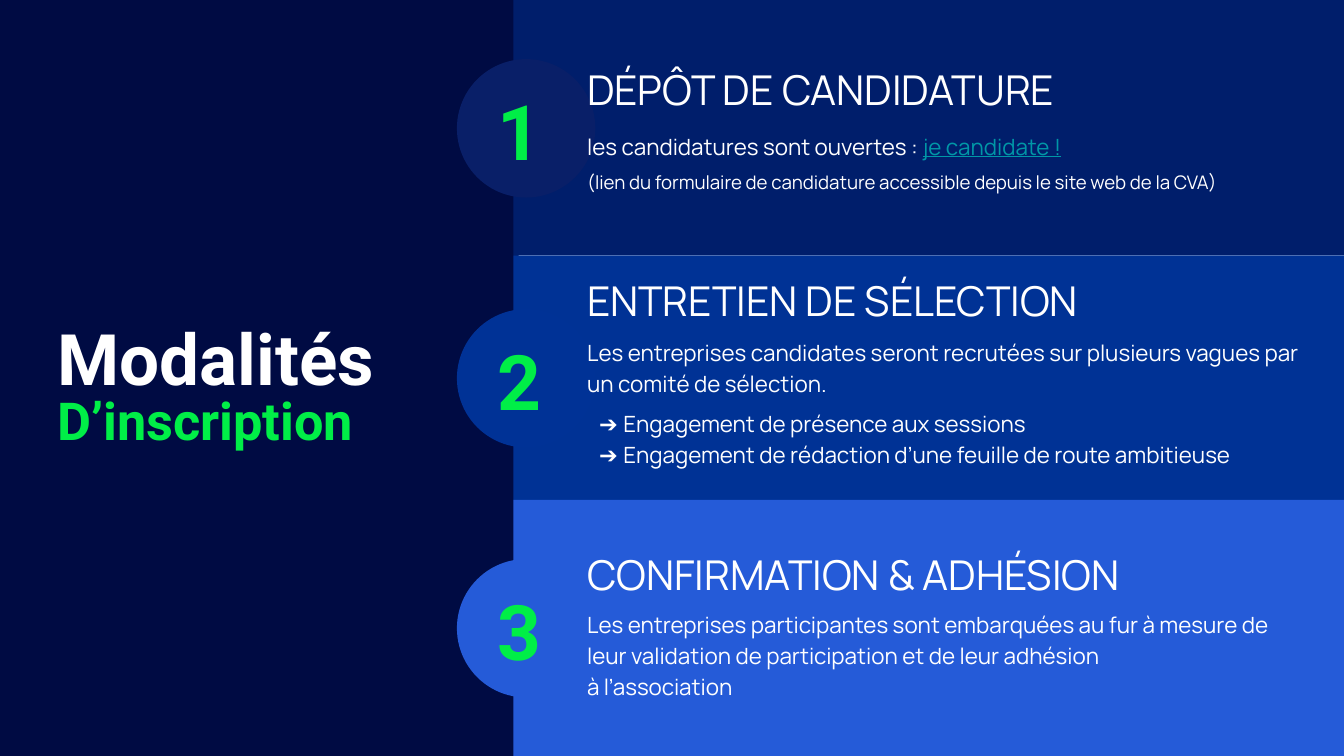
import pptx
import pptx.dml.color
import pptx.enum.shapes
import pptx.enum.text
import pptx.oxml
import pptx.oxml.ns
import pptx.util

Inches = pptx.util.Inches
Pt = pptx.util.Pt
Shapes = pptx.enum.shapes.MSO_SHAPE
Align = pptx.enum.text.PP_ALIGN
Anchor = pptx.enum.text.MSO_ANCHOR

COLORS = {
    "panel": "000B43",
    "deposit": "001E6B",
    "deposit_circle": "091F68",
    "interview": "003295",
    "interview_circle": "003296",
    "confirmation": "255BD8",
    "white": "FFFFFF",
    "green": "00EE47",
    "link": "0097A7",
}

TITLES = [
    {"text": "Modalités", "area": (0.33, 2.24, 3.17, 0.84), "size": 38, "color": "white"},
    {"text": "D’inscription", "area": (0.33, 2.79, 2.79, 0.67), "size": 28, "color": "green"},
]

STEPS = [
    {
        "band": "deposit", "circle": "deposit_circle",
        "heading": "DÉPÔT DE CANDIDATURE", "heading_area": (4.27, 0.38, 5.13, 0.57),
        "body_area": (4.27, 0.83, 5.55, 0.67), "line_spacing": 1.5,
        "body": [
            {"spans": [("les candidatures sont ouvertes : ", {}),
                       ("je candidate !", {"color": "link", "underline": True})]},
            {"spans": [("(lien du formulaire de candidature accessible depuis le site web de la CVA)",
                        {"size": 10})]},
        ],
    },
    {
        "band": "interview", "circle": "interview_circle",
        "heading": "ENTRETIEN DE SÉLECTION", "heading_area": (4.27, 1.95, 5.62, 0.57),
        "body_area": (4.27, 2.4, 5.69, 1.18), "line_spacing": 1.15,
        "body": [
            {"spans": [("Les entreprises candidates seront recrutées sur plusieurs vagues "
                        "par un comité de sélection.", {})], "after": 5},
            {"spans": [("Engagement de présence aux sessions", {})], "bullet": "➔"},
            {"spans": [("Engagement de rédaction d’une feuille de route ambitieuse", {})], "bullet": "➔"},
        ],
    },
    {
        "band": "confirmation", "circle": "confirmation",
        "heading": "CONFIRMATION & ADHÉSION", "heading_area": (4.27, 3.99, 5.13, 0.57),
        "body_area": (4.27, 4.43, 5.55, 0.87), "line_spacing": 1.15,
        "body": [
            {"spans": [("Les entreprises participantes sont embarquées au fur à mesure de leur "
                        "validation de participation et de leur adhésion", {}),
                       ("\n", {}),
                       ("à l’association", {})]},
        ],
    },
]

SLIDE_WIDTH = 10
SLIDE_HEIGHT = SLIDE_WIDTH * 9 / 16
BAND_LEFT = 3.82
BAND_EDGES = [0, 1.9, 3.72, SLIDE_HEIGHT]
CIRCLE_LEFT, CIRCLE_TOP, CIRCLE_SIZE = 3.4, 0.44, 1.03
NUMBER_LEFT, NUMBER_TOP, NUMBER_WIDTH, NUMBER_HEIGHT = 3.6, 0.52, 0.37, 0.89
STEP_PITCH = 1.86


def rgb(name):
    return pptx.dml.color.RGBColor.from_string(COLORS[name])


def add_filled(slide, kind, area, color):
    shape = slide.shapes.add_shape(kind, *map(Inches, area))
    shape.shadow.inherit = False
    shape.fill.solid()
    shape.fill.fore_color.rgb = rgb(color)
    shape.line.fill.background()


def add_bullet(para, symbol, font):
    properties = para._p.get_or_add_pPr()
    properties.set("marL", str(Inches(0.27)))
    properties.set("indent", str(Inches(-0.18)))
    namespace = pptx.oxml.ns.nsdecls("a")
    for markup in (
        f'<a:buClr {namespace}><a:srgbClr val="{COLORS["white"]}"/></a:buClr>',
        f'<a:buFont {namespace} typeface="{font}"/>',
        f'<a:buChar {namespace} char="{symbol}"/>',
    ):
        properties.append(pptx.oxml.parse_xml(markup))


def add_text(slide, content, area, size=12, font="Manrope", color="white", bold=False,
             align=Align.LEFT, anchor=Anchor.MIDDLE, line_spacing=None):
    box = slide.shapes.add_textbox(*map(Inches, area))
    frame = box.text_frame
    frame.word_wrap = True
    frame.auto_size = pptx.enum.text.MSO_AUTO_SIZE.SHAPE_TO_FIT_TEXT
    frame.vertical_anchor = anchor
    frame.margin_left = frame.margin_right = Inches(0.1)
    frame.margin_top = frame.margin_bottom = Inches(0.1)
    paragraphs = [{"spans": [(content, {})]}] if isinstance(content, str) else content
    for index, item in enumerate(paragraphs):
        para = frame.add_paragraph() if index else frame.paragraphs[0]
        para.alignment = align
        if line_spacing:
            para.line_spacing = line_spacing
        if "after" in item:
            para.space_after = Pt(item["after"])
        if "bullet" in item:
            add_bullet(para, item["bullet"], font)
        for text, style in item["spans"]:
            if text == "\n":
                para.add_line_break()
                continue
            span = para.add_run()
            span.text = text
            span.font.name = font
            span.font.size = Pt(style.get("size", size))
            span.font.bold = bold
            span.font.underline = style.get("underline")
            span.font.color.rgb = rgb(style.get("color", color))


def main():
    deck = pptx.Presentation()
    deck.slide_width = Inches(SLIDE_WIDTH)
    deck.slide_height = Inches(SLIDE_HEIGHT)
    slide = deck.slides.add_slide(deck.slide_layouts[6])

    add_filled(slide, Shapes.RECTANGLE, (0, 0, 3.86, SLIDE_HEIGHT), "panel")
    for index, step in enumerate(STEPS):
        offset = index * STEP_PITCH
        top, bottom = BAND_EDGES[index:index + 2]
        band_area = (BAND_LEFT, top, SLIDE_WIDTH - BAND_LEFT, bottom - top)
        circle_area = (CIRCLE_LEFT, CIRCLE_TOP + offset, CIRCLE_SIZE, CIRCLE_SIZE)
        number_area = (NUMBER_LEFT, NUMBER_TOP + offset, NUMBER_WIDTH, NUMBER_HEIGHT)
        add_filled(slide, Shapes.RECTANGLE, band_area, step["band"])
        add_filled(slide, Shapes.OVAL, circle_area, step["circle"])
        add_text(slide, str(index + 1), number_area, size=41, font="Roboto",
                 color="green", bold=True, align=Align.RIGHT)
        add_text(slide, step["body"], step["body_area"], line_spacing=step["line_spacing"])
        add_text(slide, step["heading"], step["heading_area"], size=22)

    for title in TITLES:
        add_text(slide, title["text"], title["area"], size=title["size"], font="Roboto",
                 color=title["color"], bold=True, anchor=Anchor.TOP)

    deck.save("out.pptx")


if __name__ == "__main__":
    main()
